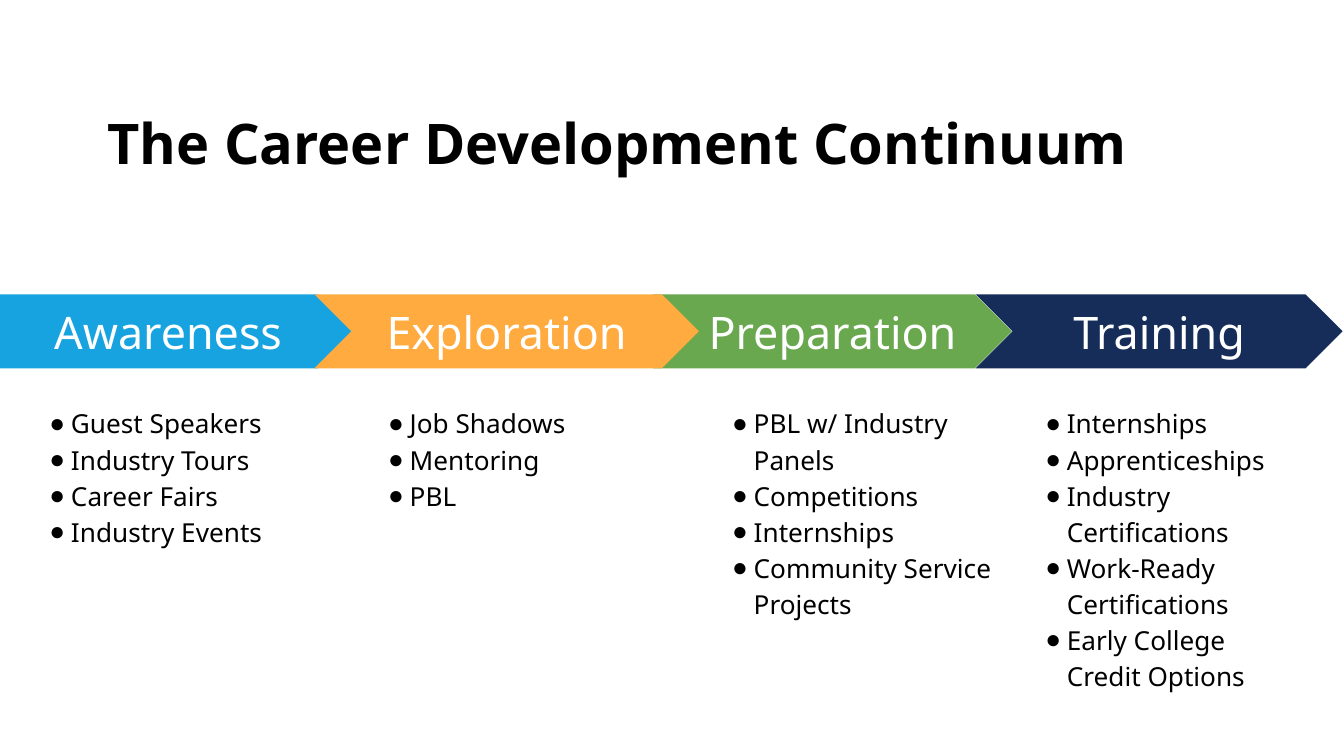
from dataclasses import dataclass

from lxml import etree
from pptx import Presentation
from pptx.dml.color import RGBColor
from pptx.enum.shapes import MSO_SHAPE
from pptx.enum.text import MSO_ANCHOR, PP_ALIGN
from pptx.oxml.ns import qn
from pptx.shapes.autoshape import Shape
from pptx.slide import Slide
from pptx.text.text import TextFrame, _Paragraph
from pptx.util import Inches, Pt

CHEVRON = MSO_SHAPE.CHEVRON
PENTAGON = MSO_SHAPE.PENTAGON
RECTANGLE = MSO_SHAPE.RECTANGLE
MIDDLE = MSO_ANCHOR.MIDDLE
TOP = MSO_ANCHOR.TOP
CENTER = PP_ALIGN.CENTER
LEFT = PP_ALIGN.LEFT

FONT = "Noto Sans"
BULLET_FONT = "Arial"
COLORS = {
    "black": "000000",
    "white": "FFFFFF",
    "blue": "16A3E0",
    "orange": "FFAB40",
    "green": "6AA84F",
    "navy": "162D5A",
}
ARROW_TOP, ARROW_HEIGHT = 2.19, 0.55
LIST_TOP = 2.9


@dataclass(frozen=True)
class Stage:
    name: str
    color: str
    arrow: MSO_SHAPE
    arrow_left: float
    arrow_width: float
    list_left: float
    list_width: float
    list_height: float
    activities: tuple[str, ...]
    filled_list: bool = False


STAGES = (
    Stage("Preparation", "green", CHEVRON, 4.86, 2.67, 5.2, 2.33, 2.15,
          ("PBL w/ Industry Panels", "Competitions", "Internships",
           "Community Service Projects")),
    Stage("Awareness", "blue", PENTAGON, 0, 2.64, 0.12, 2.36, 2.15,
          ("Guest Speakers", "Industry Tours", "Career Fairs", "Industry Events"),
          filled_list=True),
    Stage("Exploration", "orange", CHEVRON, 2.34, 2.86, 2.64, 2.22, 2.28,
          ("Job Shadows", "Mentoring", "PBL")),
    Stage("Training", "navy", CHEVRON, 7.26, 2.73, 7.53, 2.17, 2.15,
          ("Internships", "Apprenticeships", "Industry Certifications",
           "Work-Ready Certifications", "Early College Credit Options")),
)


def rgb(color: str) -> RGBColor:
    return RGBColor.from_string(COLORS[color])


def set_frame(text_frame: TextFrame, anchor: MSO_ANCHOR) -> None:
    text_frame.word_wrap = True
    text_frame.vertical_anchor = anchor
    text_frame.margin_left = text_frame.margin_right = Inches(0.1)
    text_frame.margin_top = text_frame.margin_bottom = Inches(0.1)


def format_runs(paragraph: _Paragraph, size: int, color: str, bold: bool = False) -> None:
    for run in paragraph.runs:
        run.font.name = FONT
        run.font.size = Pt(size)
        run.font.bold = bold
        run.font.color.rgb = rgb(color)


def paint(shape: Shape, color: str) -> None:
    shape.shadow.inherit = False
    shape.fill.solid()
    shape.fill.fore_color.rgb = rgb(color)
    shape.line.fill.background()


def add_bullet(paragraph: _Paragraph) -> None:
    properties = paragraph._p.get_or_add_pPr()
    properties.set("marL", str(Inches(0.31)))
    properties.set("indent", str(Inches(-0.16)))
    bullet_color = etree.SubElement(properties, qn("a:buClr"))
    etree.SubElement(bullet_color, qn("a:srgbClr"), val=COLORS["black"])
    etree.SubElement(properties, qn("a:buFont"), typeface=BULLET_FONT)
    etree.SubElement(properties, qn("a:buChar"), char="●")


def add_title(slide: Slide, text: str) -> None:
    title = slide.shapes.add_textbox(Inches(0.7), Inches(0.71), Inches(8.61), Inches(0.94))
    set_frame(title.text_frame, TOP)
    title.text_frame.text = text
    format_runs(title.text_frame.paragraphs[0], 30, "black", bold=True)


def add_arrow(slide: Slide, stage: Stage) -> None:
    arrow = slide.shapes.add_shape(
        stage.arrow, Inches(stage.arrow_left), Inches(ARROW_TOP),
        Inches(stage.arrow_width), Inches(ARROW_HEIGHT))
    arrow.adjustments[0] = 0.5
    paint(arrow, stage.color)
    set_frame(arrow.text_frame, MIDDLE)
    arrow.text_frame.text = stage.name
    paragraph = arrow.text_frame.paragraphs[0]
    paragraph.alignment = CENTER
    format_runs(paragraph, 24, "white")


def add_activities(slide: Slide, stage: Stage) -> None:
    bounds = (Inches(stage.list_left), Inches(LIST_TOP),
              Inches(stage.list_width), Inches(stage.list_height))
    if stage.filled_list:
        box = slide.shapes.add_shape(RECTANGLE, *bounds)
        paint(box, "white")
    else:
        box = slide.shapes.add_textbox(*bounds)
    set_frame(box.text_frame, TOP)
    box.text_frame.text = "\n".join(stage.activities)
    for paragraph in box.text_frame.paragraphs:
        add_bullet(paragraph)
        paragraph.alignment = LEFT
        paragraph.line_spacing = 1.15
        format_runs(paragraph, 14, "black")


def main() -> None:
    presentation = Presentation()
    presentation.slide_width = Inches(10)
    presentation.slide_height = Inches(10) * 9 // 16
    slide = presentation.slides.add_slide(presentation.slide_layouts[6])
    slide.background.fill.solid()
    slide.background.fill.fore_color.rgb = rgb("white")
    add_title(slide, "The Career Development Continuum")
    for stage in STAGES:
        add_arrow(slide, stage)
        add_activities(slide, stage)
    presentation.save("out.pptx")


if __name__ == "__main__":
    main()
